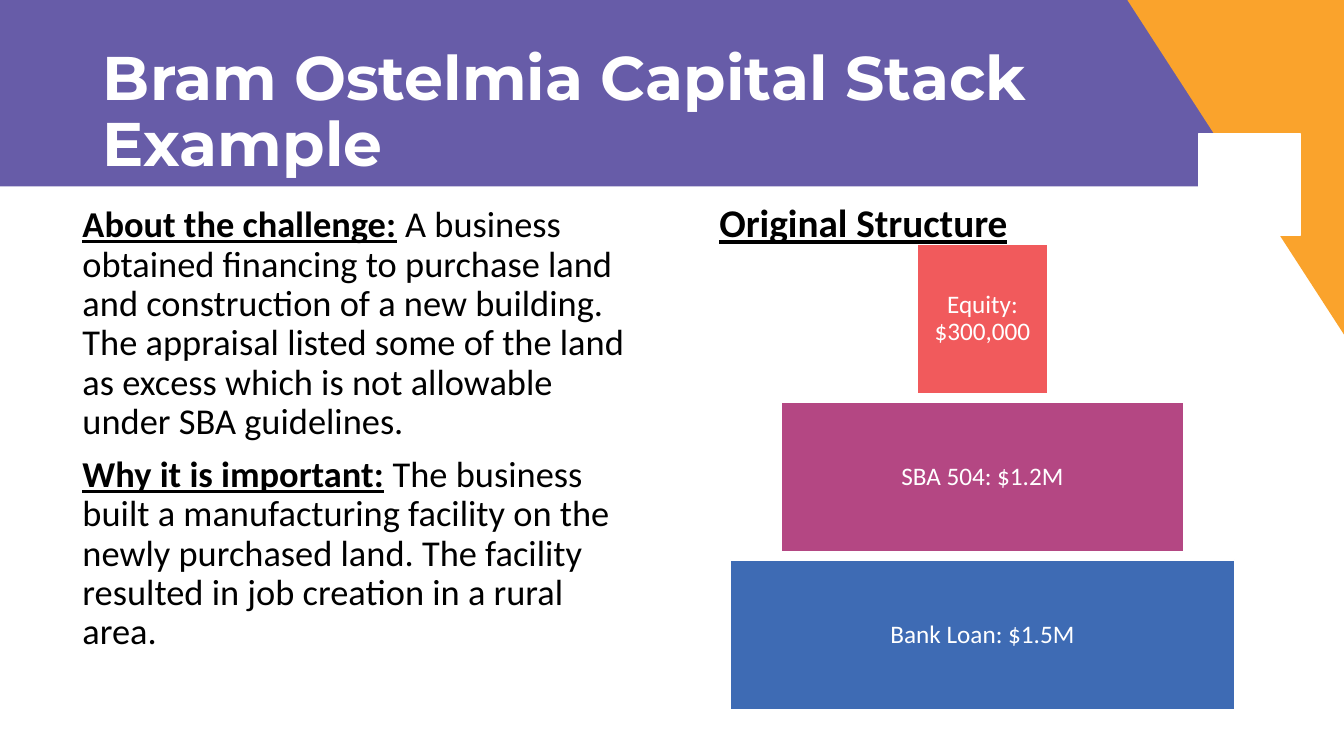
"""Build the capital stack example slide."""
from pptx import Presentation
from pptx import util as u
from pptx.dml.color import RGBColor
from pptx.enum import shapes, text

THEME = {
    "purple": "675CA8", "orange": "FAA32C", "white": "FFFFFF", "black": "000000",
    "coral": "F15A5C", "magenta": "B44783", "blue": "3E6BB4",
    "heading_font": "Montserrat", "body_font": "Calibri",
    "title_size": 44, "subtitle_size": 28, "body_size": 26, "label_size": 18,
}


def add_block(kind, left, top, width, height, color, outlined=False):
    block = slide.shapes.add_shape(kind, u.Cm(left), u.Cm(top), u.Cm(width), u.Cm(height))
    block.shadow.inherit = False
    block.fill.solid()
    block.fill.fore_color.rgb = RGBColor.from_string(THEME[color])
    if outlined:
        block.line.color.rgb = RGBColor.from_string(THEME["white"])
        block.line.width = u.Pt(1)
    else:
        block.line.fill.background()
    return block


def write(paragraph, words, size, color="black", font="body_font", **formats):
    run = paragraph.add_run()
    run.text = words
    run.font.color.rgb = RGBColor.from_string(THEME[color])
    formats.update(name=THEME[font], size=u.Pt(THEME[size]))
    for attribute, value in formats.items():
        setattr(run.font, attribute, value)


deck = Presentation()
deck.slide_width, deck.slide_height = u.Cm(33.87), u.Cm(19.05)
slide = deck.slides.add_slide(deck.slide_layouts[5])

add_block(shapes.MSO_SHAPE.RECTANGLE, 0, 0, 33.87, 4.7, "purple")
corner = add_block(shapes.MSO_SHAPE.RIGHT_TRIANGLE, 28.41, 0, 5.46, 8.43, "orange")
corner.rotation = 180

title = slide.shapes.title
title.element.getparent().append(title.element)
title_place = {"left": 2.34, "top": 1.02, "width": 29.21, "height": 3.68}
for attribute, value in title_place.items():
    setattr(title, attribute, u.Cm(value))
title_frame = {
    "word_wrap": True,
    "auto_size": text.MSO_AUTO_SIZE.NONE,
    "vertical_anchor": text.MSO_ANCHOR.MIDDLE,
}
for attribute, value in title_frame.items():
    setattr(title.text_frame, attribute, value)
heading = title.text_frame.paragraphs[0]
heading.alignment = text.PP_ALIGN.LEFT
heading.line_spacing = 0.9
write(heading, "Bram Ostelmia Capital Stack Example", "title_size", "white", "heading_font", bold=True)

story = slide.shapes.add_textbox(u.Cm(1.83), u.Cm(5.08), u.Cm(14.6), u.Cm(13.28)).text_frame
story.word_wrap = True
sections = [
    ("About the challenge:",
     " A business obtained financing to purchase land and construction of a new building. "
     "The appraisal listed some of the land as excess which is not allowable under SBA guidelines."),
    ("Why it is important:",
     " The business built a manufacturing facility on the newly purchased land. "
     "The facility resulted in job creation in a rural area."),
]
for index, (lead, details) in enumerate(sections):
    section = story.add_paragraph() if index else story.paragraphs[0]
    section.line_spacing = 0.9
    section.space_before = u.Pt(10 * index)
    write(section, lead, "body_size", bold=True, underline=True)
    write(section, details, "body_size")

STACK_CENTER, STACK_TOP, TIER_PITCH, TIER_HEIGHT = 24.76, 6.15, 3.98, 3.78
tiers = [
    ("Equity: $300,000", 3.3, "coral"),
    ("SBA 504: $1.2M", 10.16, "magenta"),
    ("Bank Loan: $1.5M", 12.7, "blue"),
]
for level, (label, width, color) in enumerate(tiers):
    tier = add_block(shapes.MSO_SHAPE.RECTANGLE, STACK_CENTER - width / 2,
                     STACK_TOP + level * TIER_PITCH, width, TIER_HEIGHT, color, outlined=True)
    for side in ("left", "top", "right", "bottom"):
        setattr(tier.text_frame, f"margin_{side}", u.Cm(0.13))
    tier.text_frame.word_wrap = True
    tier.text_frame.vertical_anchor = text.MSO_ANCHOR.MIDDLE
    caption = tier.text_frame.paragraphs[0]
    caption.alignment = text.PP_ALIGN.CENTER
    caption.line_spacing = 0.9
    write(caption, label, "label_size", "white")

subtitle = slide.shapes.add_textbox(u.Cm(17.88), u.Cm(4.88), u.Cm(7.87), u.Cm(1.45)).text_frame
subtitle.word_wrap = False
subtitle.auto_size = text.MSO_AUTO_SIZE.SHAPE_TO_FIT_TEXT
write(subtitle.paragraphs[0], "Original Structure", "subtitle_size", bold=True, underline=True)

add_block(shapes.MSO_SHAPE.RECTANGLE, 30.2, 3.38, 2.57, 2.54, "white", outlined=True)

deck.save("out.pptx")
